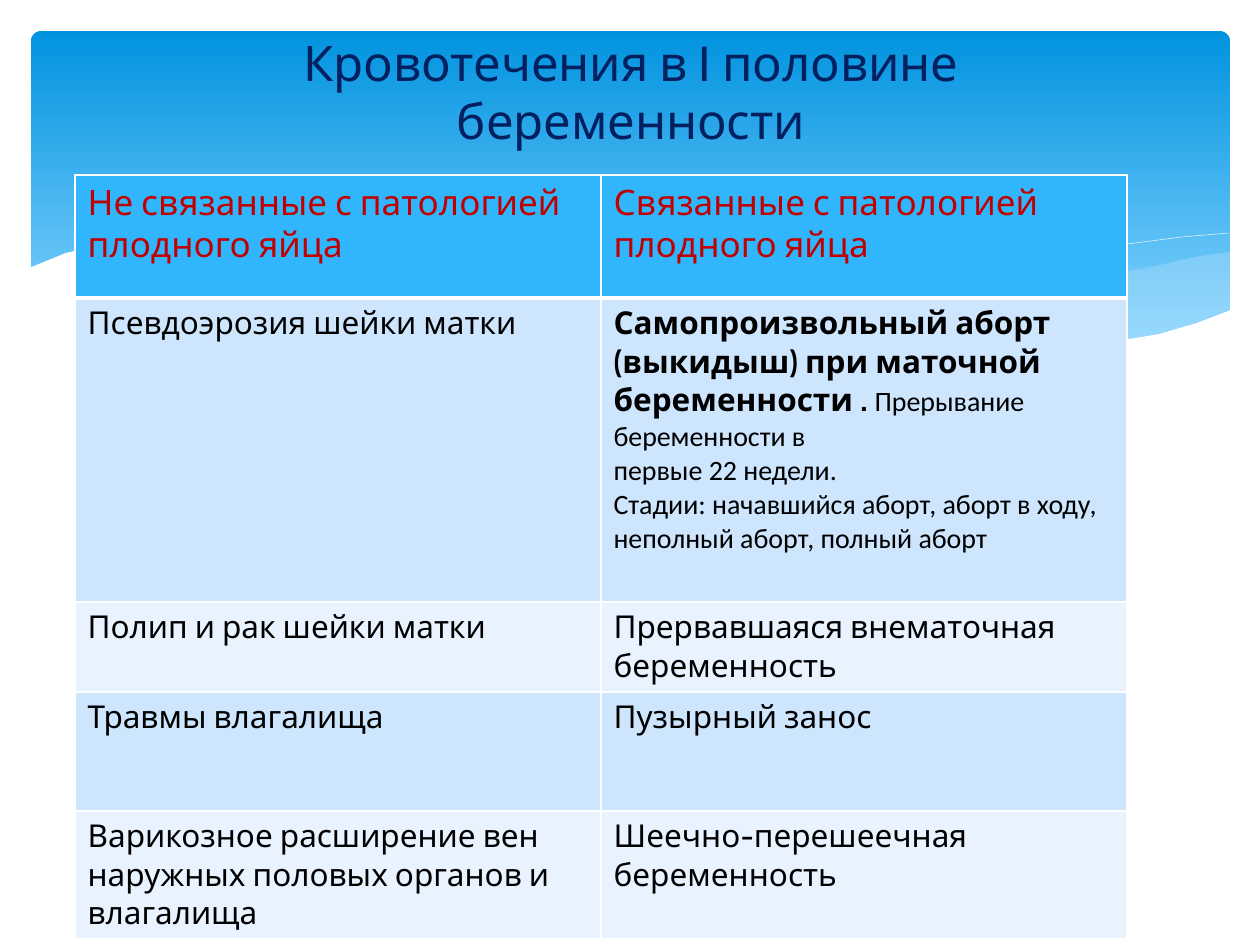
import lxml.etree
import pptx
import pptx.dml.color
import pptx.enum.shapes
import pptx.enum.text
import pptx.oxml
import pptx.oxml.ns
import pptx.util

SCALE = 914400 / 126
COLOURS = {
    "title": "002060", "heading": "C00000", "text": "000000", "white": "FFFFFF",
    "sky": "0293E0", "horizon": "83D3FE", "wave": "C6E7FC",
    "header": "31B6FD", "odd": "CEE5FE", "even": "E8F3FF",
}
STYLES = {
    "title": ("Cabin", 28, False, "title"),
    "heading": ("Cabin", 20, False, "heading"),
    "entry": ("Cabin", 18, False, "text"),
    "strong": ("Cabin", 18, True, "text"),
    "detail": ("Calibri", 16, False, "text"),
}
RIGHT_WAVE = [
    (1229, 252), (1194, 257), (1160, 265), (1123, 272), (1085, 281), (1014, 299),
    (949, 312), (890, 324), (833, 334), (888, 341), (939, 347), (984, 349),
    (1038, 349), (1087, 347), (1130, 340), (1169, 331), (1196, 324), (1230, 311),
    (1230, 252),
]
MIDDLE_WAVE = [
    (1125, 344), (1055, 334), (977, 320), (890, 302), (793, 280), (736, 266),
    (682, 256), (633, 247), (586, 241), (529, 236), (479, 233), (433, 234),
    (394, 237), (360, 241), (431, 251), (509, 266), (566, 280), (668, 302),
    (757, 321), (838, 335), (910, 345), (974, 349), (1031, 350), (1080, 349),
]
FALLING_CREST = [
    (389, 246), (433, 239), (488, 236), (546, 236), (616, 239), (701, 248),
    (801, 262), (876, 276), (958, 294), (1047, 316), (1143, 343),
]
RISING_CREST = [
    (772, 324), (847, 304), (907, 289), (978, 272), (1053, 257), (1128, 244),
    (1182, 237), (1229, 233),
]
FOREGROUND = [
    (1231, 310), (1197, 323), (1159, 334), (1118, 341), (1071, 347), (1019, 349),
    (959, 347), (892, 340), (816, 330), (730, 315), (634, 294), (563, 277),
    (493, 261), (428, 248), (368, 239), (315, 234), (266, 232), (203, 232),
    (150, 236), (107, 243), (66, 253), (29, 268), (29, 415), (1231, 415),
]
ABORTION = [
    [("Самопроизвольный аборт (выкидыш) при маточной беременности . ", "strong"),
     ("Прерывание", "detail")],
    [("беременности в", "detail")],
    [("первые 22 недели.", "detail")],
    [("Стадии: начавшийся аборт, аборт в ходу, неполный аборт, полный аборт", "detail")],
]
CAUSES = [
    ("Не связанные с патологией плодного яйца", "Связанные с патологией плодного яйца"),
    ("Псевдоэрозия шейки матки", ABORTION),
    ("Полип и рак шейки матки", "Прервавшаяся внематочная беременность"),
    ("Травмы влагалища", "Пузырный занос"),
    ("Варикозное расширение вен наружных половых органов и влагалища",
     "Шеечно-перешеечная беременность"),
]


def px(length):
    return round(length * SCALE)


def rgb(name):
    return pptx.dml.color.RGBColor.from_string(COLOURS[name])


class Deck:
    """Holds the deck's style and the current slide."""

    def __init__(self):
        self.presentation = pptx.Presentation()
        self.presentation.slide_width = px(1260)
        self.presentation.slide_height = px(945)
        self.slide = self.presentation.slides.add_slide(self.presentation.slide_layouts[5])

    def format_run(self, run, style):
        name, size, bold, colour = STYLES[style]
        run.font.name = name
        run.font.size = pptx.util.Pt(size)
        run.font.bold = bold
        run.font.color.rgb = rgb(colour)

    def banner(self, left, top, width, height):
        sky = self.slide.shapes.add_shape(
            pptx.enum.shapes.MSO_SHAPE.ROUNDED_RECTANGLE,
            px(left), px(top), px(width), px(height))
        sky.adjustments[0] = 0.03
        sky.shadow.inherit = False
        sky.line.fill.background()
        sky.fill.gradient()
        sky.fill.gradient_angle = 270
        for stop, colour, position in zip(sky.fill.gradient_stops, ("sky", "horizon"), (0, 0.9)):
            stop.color.rgb = rgb(colour)
            stop.position = position

    def outline(self, points, closed):
        builder = self.slide.shapes.build_freeform(*points[0], scale=SCALE)
        builder.add_line_segments(points[1:], close=closed)
        curve = builder.convert_to_shape()
        curve.shadow.inherit = False
        return curve

    def wave(self, points, colour, opacity=100):
        water = self.outline(points, True)
        water.line.fill.background()
        water.fill.solid()
        water.fill.fore_color.rgb = rgb(colour)
        if opacity < 100:
            tint = water.fill._xPr.find(".//" + pptx.oxml.ns.qn("a:srgbClr"))
            lxml.etree.SubElement(tint, pptx.oxml.ns.qn("a:alpha"), val=str(opacity * 1000))

    def crest(self, points):
        ridge = self.outline(points, False)
        ridge.fill.background()
        ridge.line.color.rgb = rgb("white")
        ridge.line.width = pptx.util.Pt(0.25)

    def title(self, text, left, top, width, height):
        heading = self.slide.shapes.title
        self.slide.shapes._spTree.append(heading._element)
        heading.left, heading.top = px(left), px(top)
        heading.width, heading.height = px(width), px(height)
        frame = heading.text_frame
        frame.text = text
        frame.auto_size = pptx.enum.text.MSO_AUTO_SIZE.NONE
        frame.vertical_anchor = pptx.enum.text.MSO_ANCHOR.MIDDLE
        paragraph = frame.paragraphs[0]
        paragraph.alignment = pptx.enum.text.PP_ALIGN.CENTER
        for run in paragraph.runs:
            self.format_run(run, "title")

    def borders(self, cell, row):
        widths = {"L": 1, "R": 1, "T": 3 if row == 1 else 1, "B": 3 if row == 0 else 1}
        properties = cell._tc.get_or_add_tcPr()
        for index, (side, width) in enumerate(widths.items()):
            properties.insert(index, pptx.oxml.parse_xml(
                f'<a:ln{side} {pptx.oxml.ns.nsdecls("a")} w="{pptx.util.Pt(width)}"><a:solidFill>'
                f'<a:srgbClr val="{COLOURS["white"]}"/></a:solidFill></a:ln{side}>'))

    def table(self, rows, left, top, widths, heights):
        grid = self.slide.shapes.add_table(
            len(rows), len(widths), px(left), px(top), px(sum(widths)), px(sum(heights))).table
        for column, width in zip(grid.columns, widths):
            column.width = px(width)
        for row, (entries, height) in enumerate(zip(rows, heights)):
            grid.rows[row].height = px(height)
            band = "header" if row == 0 else ("even", "odd")[row % 2]
            style = "heading" if row == 0 else "entry"
            for column, entry in enumerate(entries):
                cell = grid.cell(row, column)
                cell.fill.solid()
                cell.fill.fore_color.rgb = rgb(band)
                self.borders(cell, row)
                lines = [[(entry, style)]] if isinstance(entry, str) else entry
                for number, line in enumerate(lines):
                    frame = cell.text_frame
                    paragraph = frame.add_paragraph() if number else frame.paragraphs[0]
                    for text, run_style in line:
                        run = paragraph.add_run()
                        run.text = text
                        self.format_run(run, run_style)


def main():
    deck = Deck()
    deck.banner(31, 31, 1199, 340)
    deck.wave(RIGHT_WAVE, "wave", 29)
    deck.wave(MIDDLE_WAVE, "wave", 40)
    deck.crest(FALLING_CREST)
    deck.crest(RISING_CREST)
    deck.wave(FOREGROUND, "white")
    deck.title("Кровотечения в I половине\vбеременности", 64, 37, 1134, 108)
    deck.table(CAUSES, 75, 175, [526, 526], [123, 304, 90, 119, 127])
    deck.presentation.save("out.pptx")


if __name__ == "__main__":
    main()
